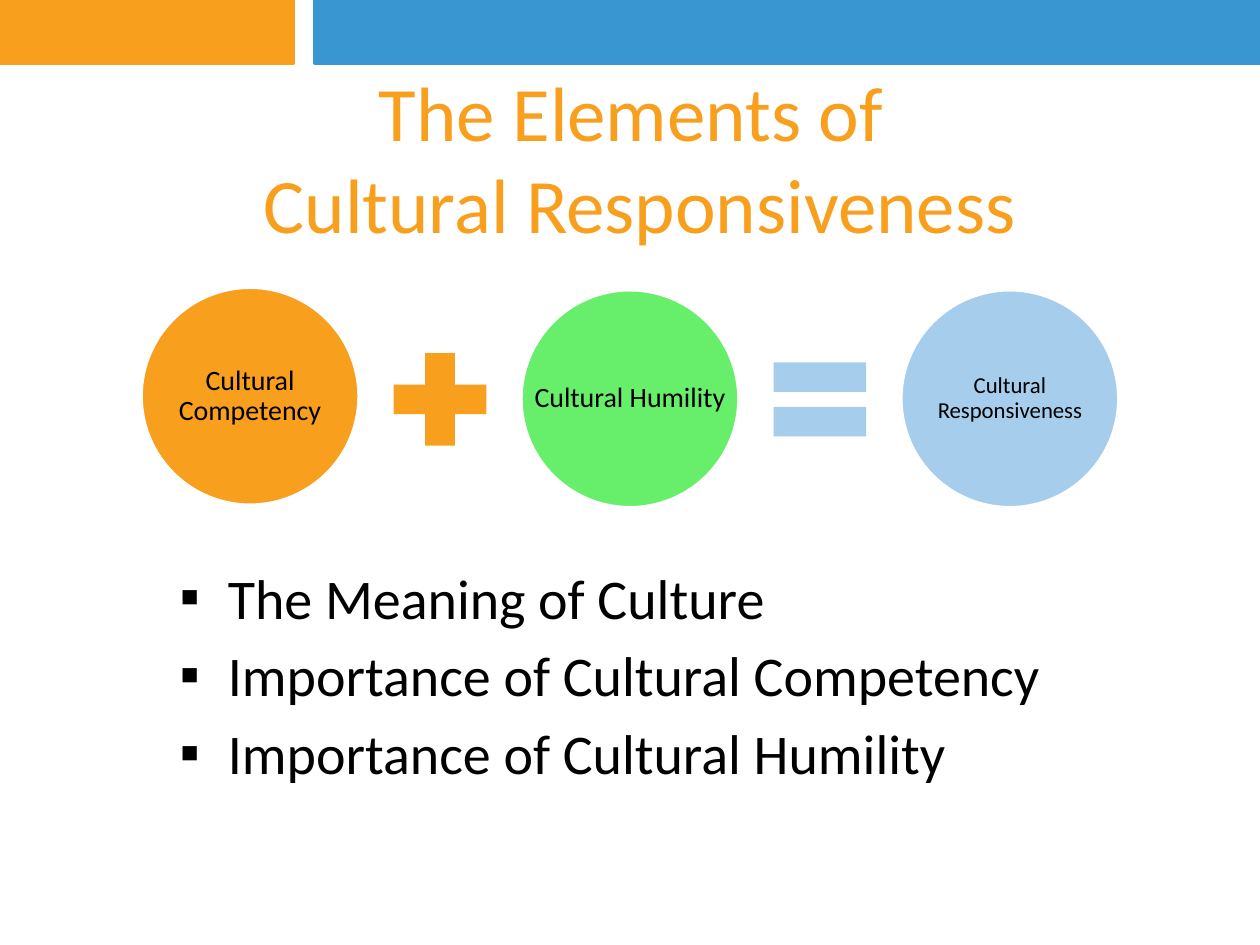
from dataclasses import dataclass

import pptx
import pptx.dml.color
import pptx.enum.shapes
import pptx.enum.text
import pptx.oxml.ns
import pptx.util
from lxml import etree

Inches = pptx.util.Inches
Pt = pptx.util.Pt
Shapes = pptx.enum.shapes.MSO_SHAPE
Anchor = pptx.enum.text.MSO_ANCHOR
Align = pptx.enum.text.PP_ALIGN

FONT = "Calibri"
COLORS = {
    "orange": "F89F1E",
    "blue": "3A96D0",
    "green": "67EE6A",
    "pale_blue": "A7CDED",
    "white": "FFFFFF",
    "black": "000000",
}


@dataclass
class Box:
    left: float
    top: float
    width: float
    height: float

    def lengths(self) -> list:
        return [Inches(v) for v in (self.left, self.top, self.width, self.height)]


@dataclass
class Figure:
    kind: Shapes
    box: Box
    fill: str
    line: str | None = None


@dataclass
class Element:
    label: str
    top: float
    fill: str
    size: int


@dataclass
class Operator:
    kind: Shapes
    fill: str


DIAMETER = 1.73
FIRST_CIRCLE_LEFT = 1.12
CIRCLE_PITCH = 3.015
OPERATOR_SIZE = 1
OPERATOR_TOP = 2.67

BANDS = [
    Figure(Shapes.RECTANGLE, Box(0, 0, 2.33, 0.5), "orange", "orange"),
    Figure(Shapes.RECTANGLE, Box(2.5, 0, 7.5, 0.5), "blue", "blue"),
]
ELEMENTS = [
    Element("Cultural Competency", 2.28, "orange", 16),
    Element("Cultural Humility", 2.3, "green", 16),
    Element("Cultural Responsiveness", 2.3, "pale_blue", 13),
]
OPERATORS = [
    Operator(Shapes.MATH_PLUS, "orange"),
    Operator(Shapes.MATH_EQUAL, "pale_blue"),
]
TITLE_LINES = ["The Elements of ", "Cultural Responsiveness"]
TOPICS = [
    "The Meaning of Culture",
    "Importance of Cultural Competency",
    "Importance of Cultural Humility",
]


def rgb(name: str) -> pptx.dml.color.RGBColor:
    return pptx.dml.color.RGBColor.from_string(COLORS[name])


def draw_figure(slide, figure: Figure) -> None:
    shape = slide.shapes.add_shape(figure.kind, *figure.box.lengths())
    shape.shadow.inherit = False
    shape.fill.solid()
    shape.fill.fore_color.rgb = rgb(figure.fill)
    if figure.line:
        shape.line.color.rgb = rgb(figure.line)
        shape.line.width = Pt(2)
    else:
        shape.line.fill.background()


def add_frame(slide, box: Box, anchor: Anchor):
    frame = slide.shapes.add_textbox(*box.lengths()).text_frame
    frame.word_wrap = True
    frame.vertical_anchor = anchor
    return frame


def add_run(paragraph, text: str, size: int, color: str) -> None:
    run = paragraph.add_run()
    run.text = text
    run.font.name = FONT
    run.font.size = Pt(size)
    run.font.color.rgb = rgb(color)


def draw_title(slide) -> None:
    frame = add_frame(slide, Box(0.33, 0.58, 9.5, 1.33), Anchor.MIDDLE)
    title = frame.paragraphs[0]
    title.alignment = Align.CENTER
    for index, line in enumerate(TITLE_LINES):
        if index:
            title.add_line_break()
        add_run(title, line, 44, "orange")


def draw_element(slide, element: Element, left: float) -> None:
    box = Box(left, element.top, DIAMETER, DIAMETER)
    draw_figure(slide, Figure(Shapes.OVAL, box, element.fill, "white"))
    frame = add_frame(slide, box, Anchor.MIDDLE)
    frame.margin_left = frame.margin_right = Inches(0.02)
    frame.margin_top = frame.margin_bottom = Inches(0.02)
    label = frame.paragraphs[0]
    label.alignment = Align.CENTER
    label.line_spacing = 0.9
    add_run(label, element.label, element.size, "black")


def draw_equation(slide) -> None:
    for index, element in enumerate(ELEMENTS):
        draw_element(slide, element, FIRST_CIRCLE_LEFT + index * CIRCLE_PITCH)
    gap = CIRCLE_PITCH - DIAMETER
    first_left = FIRST_CIRCLE_LEFT + DIAMETER + (gap - OPERATOR_SIZE) / 2
    for index, operator in enumerate(OPERATORS):
        left = first_left + index * CIRCLE_PITCH
        box = Box(left, OPERATOR_TOP, OPERATOR_SIZE, OPERATOR_SIZE)
        draw_figure(slide, Figure(operator.kind, box, operator.fill))


def add_bullet(paragraph) -> None:
    properties = paragraph._p.get_or_add_pPr()
    properties.set("marL", str(Inches(0.38)))
    properties.set("indent", str(Inches(-0.38)))
    qn = pptx.oxml.ns.qn
    etree.SubElement(properties, qn("a:buFont")).set("typeface", FONT)
    etree.SubElement(properties, qn("a:buChar")).set("char", "▪")


def draw_topics(slide) -> None:
    frame = add_frame(slide, Box(1.33, 4.42, 8.5, 3), Anchor.TOP)
    for index, text in enumerate(TOPICS):
        topic = frame.add_paragraph() if index else frame.paragraphs[0]
        add_bullet(topic)
        if index:
            topic.space_before = Pt(6)
        add_run(topic, text, 32, "black")


def main() -> None:
    deck = pptx.Presentation()
    deck.slide_width = Inches(10)
    deck.slide_height = Inches(7.5)
    slide = deck.slides.add_slide(deck.slide_layouts[6])
    for band in BANDS:
        draw_figure(slide, band)
    draw_title(slide)
    draw_topics(slide)
    draw_equation(slide)
    deck.save("out.pptx")


if __name__ == "__main__":
    main()
